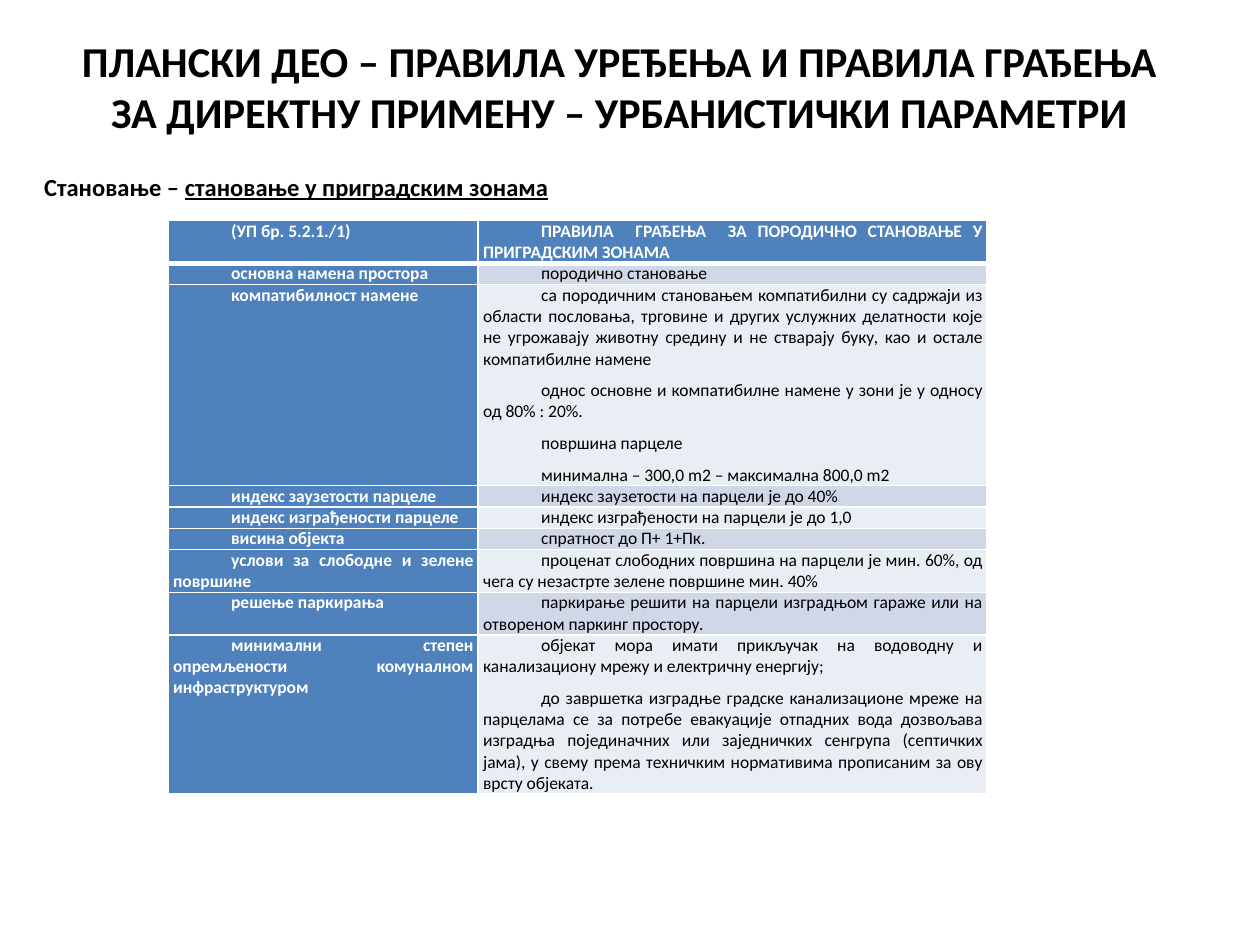
from dataclasses import dataclass

from lxml import etree
from pptx import Presentation
from pptx.dml.color import RGBColor
from pptx.enum import text
from pptx.oxml import ns
from pptx.util import Cm, Pt

FONT = "Calibri"
BLACK = RGBColor(0x00, 0x00, 0x00)
WHITE = RGBColor(0xFF, 0xFF, 0xFF)
BLUE = RGBColor(0x4F, 0x81, 0xBD)
BANDS = (RGBColor(0xD0, 0xD8, 0xE8), RGBColor(0xE9, 0xED, 0xF4))

TITLE = ("ПЛАНСКИ ДЕО – ПРАВИЛА УРЕЂЕЊА И ПРАВИЛА ГРАЂЕЊА ЗА ДИРЕКТНУ ПРИМЕНУ "
         "– УРБАНИСТИЧКИ ПАРАМЕТРИ")


@dataclass(frozen=True)
class Rule:
    label: str
    details: tuple[str, ...]
    height: float = 0.43  # cm


HEADER = Rule("(УП бр. 5.2.1./1)",
              ("ПРАВИЛА  ГРАЂЕЊА  ЗА ПОРОДИЧНО СТАНОВАЊЕ У ПРИГРАДСКИМ ЗОНАМА",), 0.86)
RULES = (
    Rule("основна намена простора", ("породично становање",)),
    Rule("компатибилност намене", (
        "са породичним становањем компатибилни су садржаји из области пословања, трговине "
        "и других услужних делатности које не угрожавају животну средину и не стварају буку, "
        "као и остале компатибилне намене",
        "однос основне и компатибилне намене у зони је у односу од 80% : 20%.",
        "површина парцеле",
        "минимална – 300,0 m2 – максимална 800,0 m2"), 4.05),
    Rule("индекс заузетости парцеле", ("индекс заузетости на парцели је до 40%",)),
    Rule("индекс изграђености парцеле", ("индекс изграђености на парцели је до 1,0",)),
    Rule("висина објекта", ("спратност до П+ 1+Пк.",)),
    Rule("услови за слободне и зелене површине", (
        "проценат слободних површина на парцели је мин. 60%, од чега су незастрте зелене "
        "површине мин. 40%",), 0.86),
    Rule("решење паркирања", (
        "паркирање решити на парцели изградњом гараже или на отвореном паркинг простору.",), 0.86),
    Rule("минимални степен опремљености комуналном инфраструктуром", (
        "објекат мора имати прикључак на водоводну и канализациону мрежу и електричну енергију;",
        "до завршетка изградње градске канализационе мреже на парцелама се за потребе евакуације "
        "отпадних вода дозвољава изградња појединачних или заједничких сенгрупа (септичких јама), "
        "у свему према техничким нормативима прописаним за ову врсту објеката."), 3.2),
)


def set_font(paragraph, size: float, color: RGBColor, bold: bool) -> None:
    font = paragraph.font
    font.name, font.size, font.bold = FONT, Pt(size), bold
    font.color.rgb = color


def add_heading(slide, left: float, top: float, width: float, height: float,
                size: float, alignment):
    """Add a bold, wrapping text box and return its frame and first paragraph."""
    frame = slide.shapes.add_textbox(Cm(left), Cm(top), Cm(width), Cm(height)).text_frame
    frame.word_wrap = True
    paragraph = frame.paragraphs[0]
    paragraph.alignment = alignment
    set_font(paragraph, size, BLACK, True)
    return frame, paragraph


def set_borders(cell, top: float, bottom: float) -> None:
    properties = cell._tc.get_or_add_tcPr()
    for side, width in (("L", 1), ("R", 1), ("T", top), ("B", bottom)):
        line = etree.SubElement(properties, ns.qn(f"a:ln{side}"), w=str(Pt(width)))
        fill = etree.SubElement(line, ns.qn("a:solidFill"))
        etree.SubElement(fill, ns.qn("a:srgbClr"), val=str(WHITE))


def fill_cell(cell, lines: tuple[str, ...], fill: RGBColor, color: RGBColor, bold: bool) -> None:
    cell.margin_left = cell.margin_right = Cm(0.1)
    cell.margin_top = cell.margin_bottom = 0
    cell.fill.solid()
    cell.fill.fore_color.rgb = fill
    cell.text_frame.text = "\n".join(lines)
    for paragraph in cell.text_frame.paragraphs:
        paragraph.alignment = text.PP_ALIGN.JUSTIFY
        paragraph.space_after = Pt(6)
        paragraph._p.get_or_add_pPr().set("indent", str(Cm(1.17)))
        set_font(paragraph, 10, color, bold)


def add_rules_table(slide) -> None:
    rows = (HEADER, *RULES)
    widths = (6.25, 10.26)
    table = slide.shapes.add_table(len(rows), len(widths), Cm(3.39), Cm(4.45), Cm(sum(widths)),
                                   Cm(sum(rule.height for rule in rows))).table
    for column, width in zip(table.columns, widths):
        column.width = Cm(width)
    for index, rule in enumerate(rows):
        table.rows[index].height = Cm(rule.height)
        label, details = table.cell(index, 0), table.cell(index, 1)
        for cell in (label, details):
            set_borders(cell, top=3 if index == 1 else 1, bottom=3 if index == 0 else 1)
        fill_cell(label, (rule.label,), BLUE, WHITE, True)
        if index == 0:
            fill_cell(details, rule.details, BLUE, WHITE, True)
        else:
            fill_cell(details, rule.details, BANDS[(index - 1) % 2], BLACK, False)


def main() -> None:
    presentation = Presentation()
    presentation.slide_width, presentation.slide_height = Cm(25.4), Cm(19.05)
    slide = presentation.slides.add_slide(presentation.slide_layouts[6])

    frame, title = add_heading(slide, 1.27, 0.84, 22.43, 1.78, 24.3, text.PP_ALIGN.CENTER)
    frame.vertical_anchor = text.MSO_ANCHOR.MIDDLE
    title.add_run().text = TITLE

    frame, subtitle = add_heading(slide, 0.64, 2.62, 24.13, 15.67, 14, text.PP_ALIGN.JUSTIFY)
    frame.margin_top = Cm(0.84)
    subtitle.add_run().text = "Становање – "
    zone = subtitle.add_run()
    zone.text = "становање у приградским зонама"
    zone.font.underline = True

    add_rules_table(slide)
    presentation.save("out.pptx")


if __name__ == "__main__":
    main()
